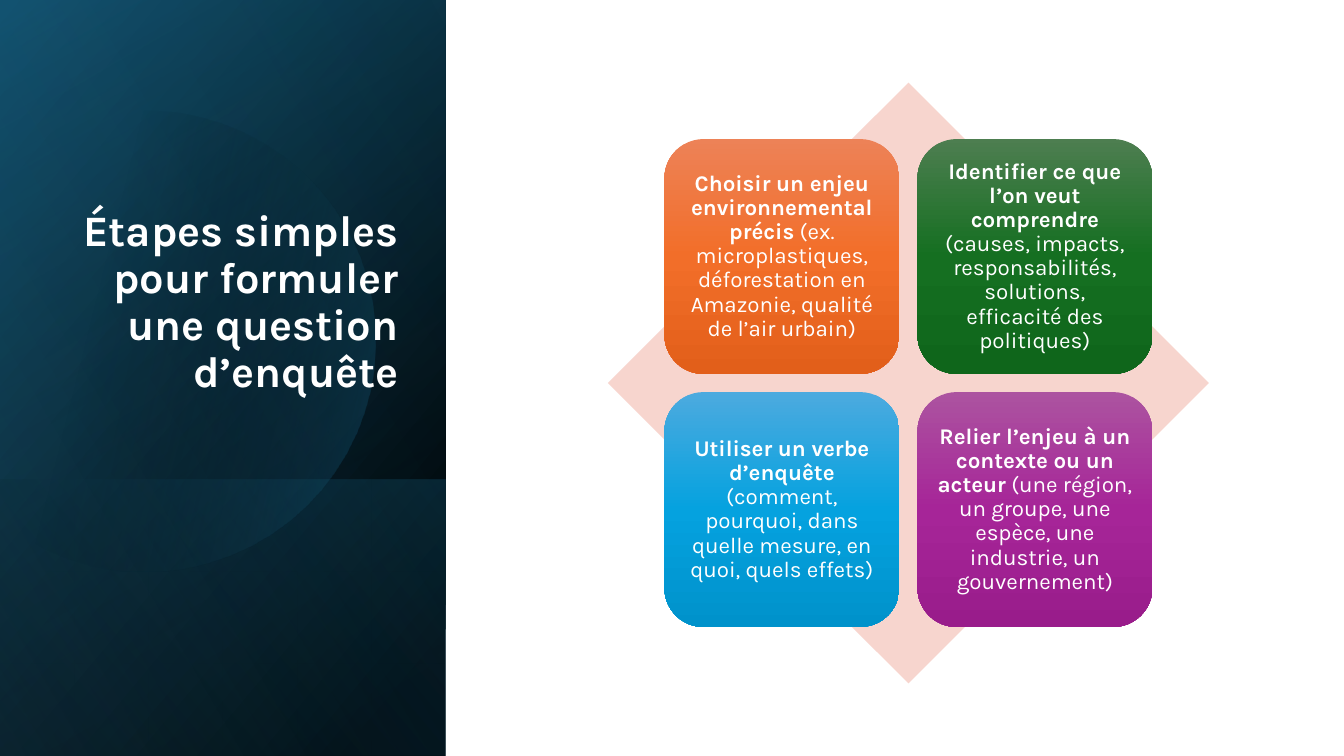
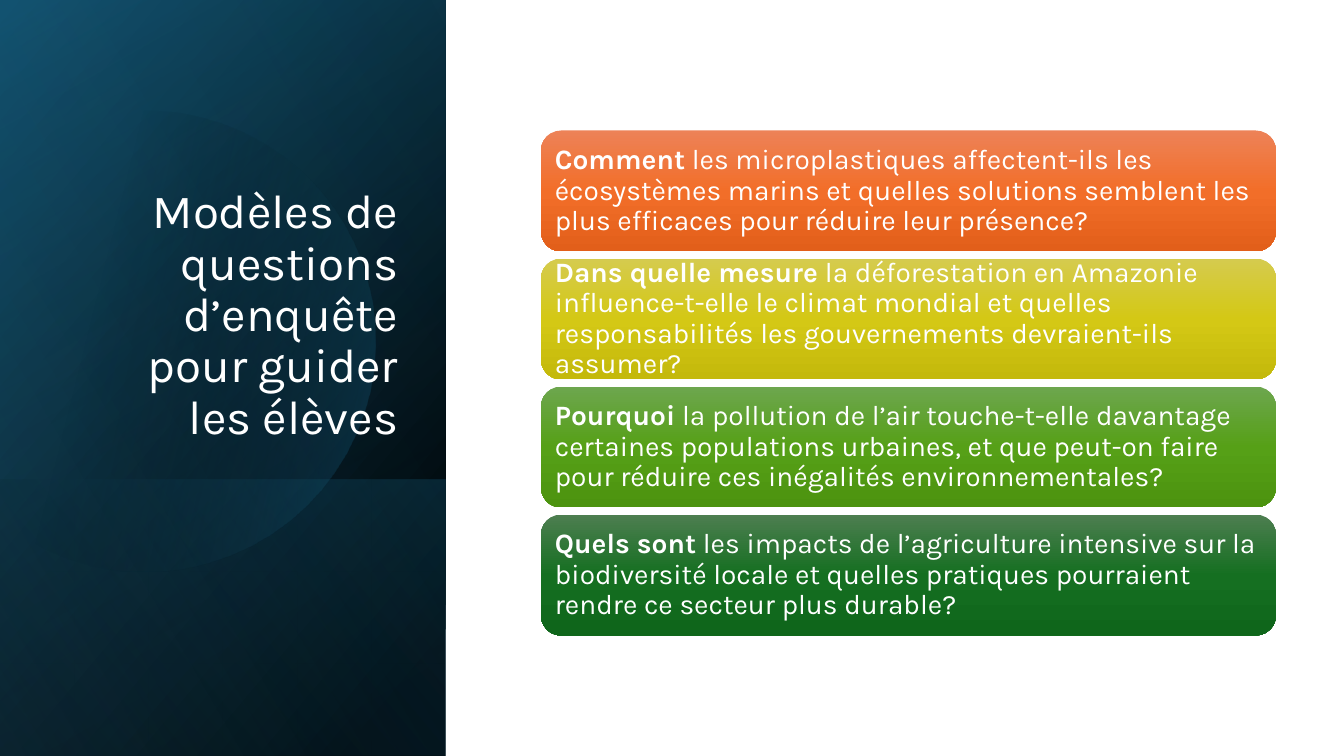
from lxml.etree import SubElement
from pptx import Presentation
from pptx.dml.color import RGBColor
from pptx.enum.shapes import MSO_SHAPE
from pptx.enum.text import MSO_ANCHOR, MSO_AUTO_SIZE, PP_ALIGN
from pptx.oxml.ns import qn
from pptx.util import Inches, Pt

FONT = "Karla"
WHITE = "FFFFFF"
PANEL_WIDTH = 4.42
CENTRE_X, CENTRE_Y = 9.01, 3.8  # middle of the content area

# Card gradients, from top to bottom
ORANGE = [(0, "ED8257"), (50, "F26E29"), (100, "E25F1A")]
YELLOW = [(0, "D5CB4E"), (50, "D4C815"), (100, "C4B90B")]
LIME = [(0, "6DA64E"), (50, "56A017"), (100, "4C930F")]
GREEN = [(0, "4D7E50"), (50, "156F21"), (100, "0F661B")]
BLUE = [(0, "4CAADF"), (50, "05A2DF"), (100, "0092CB")]
PURPLE = [(0, "AC53A0"), (50, "A62598"), (100, "991C8B")]

# Side panel layers: outline, top, height, gradient stops (position, colour, opacity), angle
LAYERS = [
    ("band", 0, 7.5, [(8, "000000"), (100, "104862")], 50),
    ("band", 0, 7.5, [(0, "000000", 0), (99, "156082", 46)], 30),
    ("band", 4.76, 2.74, [(2, "156082", 29), (100, "000000", 30)], 130),
    ("disc", 1.1, 4.55, [(29, "000000", 0), (100, "156082", 43)], 14),
    ("band", 0, 7.5, [(0, "000000", 0), (99, "46B1E1", 11)], 120),
]
DISC_START = (1.49, 1.1)
DISC_CURVES = [
    [(2.46, 1.12), (3.35, 1.77), (3.63, 2.75)],
    [(3.98, 3.97), (3.28, 5.23), (2.07, 5.58)],
    [(1.31, 5.8), (0.53, 5.61), (0, 5.14)],
    [(0, 5.14), (0, 1.61), (0, 1.61)],
    [(0.23, 1.42), (0.5, 1.28), (0.8, 1.19)],
    [(1.03, 1.13), (1.26, 1.1), (1.49, 1.1)],
]
CURVE_STEPS = 16

STEPS = [
    (ORANGE, "Choisir un enjeu environnemental précis",
     " (ex. microplastiques, déforestation en Amazonie, qualité de l’air urbain)"),
    (GREEN, "Identifier ce que l’on veut comprendre",
     " (causes, impacts, responsabilités, solutions, efficacité des politiques)"),
    (BLUE, "Utiliser un verbe d’enquête",
     " (comment, pourquoi, dans quelle mesure, en quoi, quels effets)"),
    (PURPLE, "Relier l’enjeu à un contexte ou un acteur",
     " (une région, un groupe, une espèce, une industrie, un gouvernement)"),
]
QUESTIONS = [
    (ORANGE, "Comment",
     " les microplastiques affectent-ils les écosystèmes marins et quelles solutions "
     "semblent les plus efficaces pour réduire leur présence?"),
    (YELLOW, "Dans quelle mesure",
     " la déforestation en Amazonie influence-t-elle le climat mondial et quelles "
     "responsabilités les gouvernements devraient-ils assumer?"),
    (LIME, "Pourquoi",
     " la pollution de l’air touche-t-elle davantage certaines populations urbaines, "
     "et que peut-on faire pour réduire ces inégalités environnementales?"),
    (GREEN, "Quels sont",
     " les impacts de l’agriculture intensive sur la biodiversité locale et quelles "
     "pratiques pourraient rendre ce secteur plus durable?"),
]

# Per slide: title, size, bold, bottom inset, columns, card width, height, gap,
# text size, text inset, alignment, cards
PAGES = [
    ("Étapes simples pour formuler une question d’enquête", 31, True, 0.52,
     2, 2.33, 2.33, 0.18, 16, 0.07, PP_ALIGN.CENTER, STEPS),
    ("Modèles de questions d’enquête pour guider les élèves", 34, False, 0.05,
     1, 7.29, 1.2, 0.07, 20, 0.08, PP_ALIGN.LEFT, QUESTIONS),
]


def paint(shape, colour, angle=90):
    """Fill with one hex colour or with gradient stops; no line, no shadow."""
    shape.shadow.inherit = False
    shape.line.fill.background()
    if isinstance(colour, str):
        shape.fill.solid()
        shape.fill.fore_color.rgb = RGBColor.from_string(colour)
        return
    shape.fill.gradient()
    shape.fill.gradient_angle = 360 - angle
    stops = shape._element.spPr.find(qn("a:gradFill")).find(qn("a:gsLst"))
    for old_stop in list(stops):
        stops.remove(old_stop)
    for position, value, *opacity in colour:
        stop = SubElement(stops, qn("a:gs"), pos=str(position * 1000))
        tint = SubElement(stop, qn("a:srgbClr"), val=value)
        for share in opacity:
            SubElement(tint, qn("a:alpha"), val=str(share * 1000))


def write(shape, spans, size, align, anchor, insets):
    """Write one paragraph of (text, bold) spans; insets are side, top, bottom."""
    frame = shape.text_frame
    frame.word_wrap = True
    frame.auto_size = MSO_AUTO_SIZE.NONE
    frame.vertical_anchor = anchor
    side, top, bottom = insets
    frame.margin_left = frame.margin_right = Inches(side)
    frame.margin_top, frame.margin_bottom = Inches(top), Inches(bottom)
    para = frame.paragraphs[0]
    para.alignment = align
    para.line_spacing = 0.9
    para.space_before = Pt(0)
    for text, bold in spans:
        span = para.add_run()
        span.text = text
        span.font.name, span.font.size, span.font.bold = FONT, Pt(size), bold
        span.font.color.rgb = RGBColor.from_string(WHITE)


deck = Presentation()
deck.slide_width, deck.slide_height = Inches(13.33), Inches(7.5)

for (heading, heading_size, heading_bold, heading_bottom, columns, width, height,
     gap, size, inset, align, cards) in PAGES:
    page = deck.slides.add_slide(deck.slide_layouts[5])
    shapes = page.shapes

    # Side panel
    for outline, top, tall, stops, angle in LAYERS:
        if outline == "disc":
            builder = shapes.build_freeform(*map(Inches, DISC_START), scale=1.0)
            start, points = DISC_START, []
            for first, second, end in DISC_CURVES:
                for step in range(1, CURVE_STEPS + 1):
                    t = step / CURVE_STEPS
                    points.append([
                        Inches((1 - t) ** 3 * a + 3 * (1 - t) ** 2 * t * b
                               + 3 * (1 - t) * t ** 2 * c + t ** 3 * d)
                        for a, b, c, d in zip(start, first, second, end)])
                start = end
            builder.add_line_segments(points, close=True)
            layer = builder.convert_to_shape()
        else:
            # A quarter turn swaps the sides of the frame around its centre
            shift = (PANEL_WIDTH - tall) / 2
            layer = shapes.add_shape(MSO_SHAPE.RECTANGLE, Inches(shift), Inches(top - shift),
                                     Inches(tall), Inches(PANEL_WIDTH))
            layer.rotation = 90
            layer._element.spPr.xfrm.set("flipH", "1")
        paint(layer, stops, angle)

    # Title, brought in front of the panel
    title = shapes.title
    title.left, title.top, title.width, title.height = map(Inches, (0.64, 1.84, 3.41, 2.62))
    write(title, [(heading, heading_bold)], heading_size, PP_ALIGN.RIGHT,
          MSO_ANCHOR.BOTTOM, (0.1, 0.05, heading_bottom))
    shapes._spTree.append(title._element)

    # Diamond behind the grid of four
    if columns == 2:
        side = 5.96
        diamond = shapes.add_shape(MSO_SHAPE.DIAMOND, Inches(CENTRE_X - side / 2),
                                   Inches(CENTRE_Y - side / 2), Inches(side), Inches(side))
        paint(diamond, "F7D5CE")

    # Cards, on a grid centred in the content area
    rows = len(cards) // columns
    left = CENTRE_X - (columns * (width + gap) - gap) / 2
    top = CENTRE_Y - (rows * (height + gap) - gap) / 2
    for index, (stops, lead, rest) in enumerate(cards):
        row, column = divmod(index, columns)
        card = shapes.add_shape(MSO_SHAPE.ROUNDED_RECTANGLE,
                                Inches(left + column * (width + gap)),
                                Inches(top + row * (height + gap)),
                                Inches(width), Inches(height))
        paint(card, stops)
        write(card, [(lead, True), (rest, False)], size, align,
              MSO_ANCHOR.MIDDLE, (inset, inset, inset))

deck.save("out.pptx")
